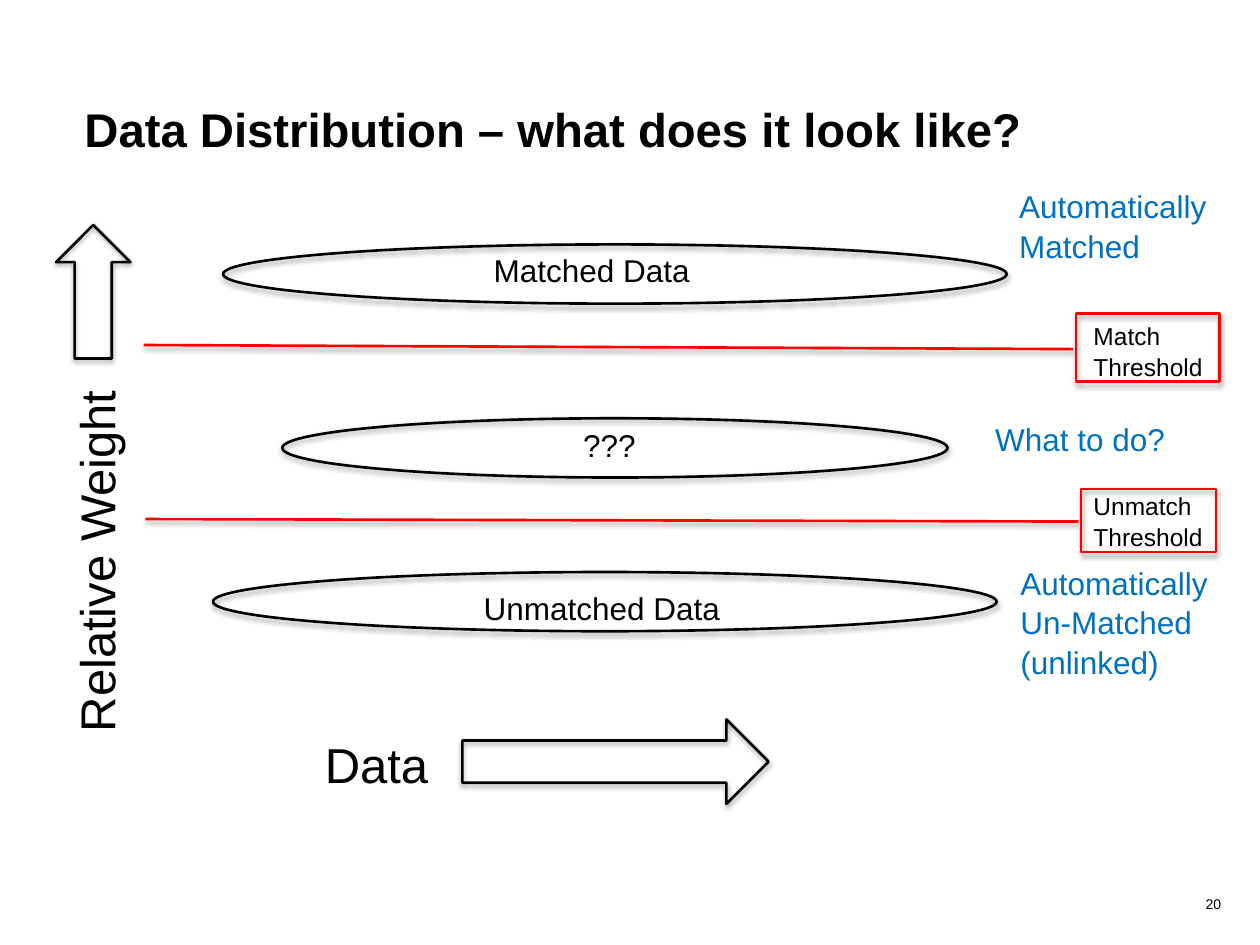
from lxml import etree
from pptx import Presentation
from pptx import util as u
from pptx.dml.color import RGBColor
from pptx.enum import shapes, text
from pptx.oxml.ns import qn

BLACK = RGBColor(0x00, 0x00, 0x00)
RED = RGBColor(0xFF, 0x00, 0x00)
BLUE = RGBColor(0x00, 0x70, 0xC0)
FONT = "Arial"
COLUMNS, ROWS = 100, 75
WIDTH, HEIGHT = u.Inches(10), u.Inches(7.5)
SHAPE = shapes.MSO_SHAPE


def on_grid(box):
    """Turn left, top, width, height in columns and rows into lengths."""
    left, top, width, height = box
    return (int(left * WIDTH / COLUMNS), int(top * HEIGHT / ROWS),
            int(width * WIDTH / COLUMNS), int(height * HEIGHT / ROWS))


def within(box, offset):
    """Move a part's box from its region's corner to the page."""
    return (box[0] + offset[0], box[1] + offset[1], offset[2], offset[3])


def add_text(page, box, lines, size, color=BLACK, bold=False, wrap=False,
             spacing=1.05):
    label = page.shapes.add_textbox(*on_grid(box))
    frame = label.text_frame
    frame.word_wrap = wrap
    for index, line in enumerate(lines):
        para = frame.paragraphs[0] if index == 0 else frame.add_paragraph()
        para.line_spacing = spacing
        span = para.add_run()
        span.text = line
        span.font.name = FONT
        span.font.size = u.Pt(size)
        span.font.bold = bold
        span.font.color.rgb = color
    return label


def add_soft_shadow(shape):
    shape.shadow.inherit = False
    effects = shape._element.spPr.find(qn("a:effectLst"))
    shadow = etree.SubElement(effects, qn("a:outerShdw"), blurRad=str(u.Pt(3.1)),
                              dist=str(u.Pt(1.6)), dir="5400000", rotWithShape="0")
    color = etree.SubElement(shadow, qn("a:srgbClr"), val=str(BLACK))
    etree.SubElement(color, qn("a:alpha"), val="38000")


def add_outline(page, kind, box, color=BLACK):
    shape = page.shapes.add_shape(kind, *on_grid(box))
    shape.fill.background()
    shape.line.color.rgb = color
    shape.line.width = u.Pt(1.5)
    add_soft_shadow(shape)
    return shape


def add_title(page, box, words):
    frame = add_text(page, box, [words], 27, bold=True, wrap=True,
                     spacing=1.0).text_frame
    frame.vertical_anchor = text.MSO_ANCHOR.BOTTOM
    frame.margin_left = frame.margin_right = u.Inches(0.02)
    frame.margin_top = frame.margin_bottom = u.Inches(0.02)


def add_band(page, box, label, label_offset, note, note_offset):
    """An ellipse of data, its label inside and the outcome at its right."""
    add_outline(page, SHAPE.OVAL, box)
    add_text(page, within(box, label_offset), [label], 18)
    add_text(page, within(box, note_offset), note, 18, BLUE)


def add_threshold(page, box, words, text_offset, leader):
    """A red box whose leader line runs across the data."""
    callout = add_outline(page, SHAPE.LINE_CALLOUT_1, box, RED)
    for index, value in enumerate(leader):
        callout.adjustments[index] = value
    add_text(page, within(box, text_offset), words, 14)


def add_axis(page, box, words, label_length, arrow_start, arrow_length, upright=False):
    """A label and an arrow along the box, read upwards when upright."""
    left, top, width, height = box
    thickness = width if upright else height

    def along(start, length, depth):
        if upright:
            center_x, center_y = left + width / 2, top + height - start - length / 2
        else:
            center_x, center_y = left + start + length / 2, top + height / 2
        return center_x - length / 2, center_y - depth / 2, length, depth

    label = add_text(page, along(0, label_length, 5.7), [words], 28, wrap=True)
    arrow = add_outline(page, SHAPE.RIGHT_ARROW,
                        along(arrow_start, arrow_length, thickness))
    for part in (label, arrow):
        part.rotation = 270 if upright else 0


def main():
    deck = Presentation()
    deck.slide_width, deck.slide_height = WIDTH, HEIGHT
    page = deck.slides.add_slide(deck.slide_layouts[6])

    # Title and page number
    add_title(page, (6.5, 5.3, 90.1, 7.4), "Data Distribution – what does it look like?")
    add_text(page, (94.7, 70.6, 5.3, 3.6), ["20"], 8, wrap=True, spacing=1.0)

    # Bands of data
    add_band(page, (17.7, 19.4, 62.2, 4.7), "Matched Data", (20.5, -0.1, 17.7, 4),
             ["Automatically", "Matched"], (62.2, -5.2, 17.7, 7.1))
    add_band(page, (22.4, 33.2, 52.8, 4.7), "???", (22.9, 0, 6.2, 4),
             ["What to do?"], (55.6, -0.5, 15.6, 4))
    add_band(page, (16.9, 45.4, 62.2, 4.7), "Unmatched Data", (20.5, 0.7, 21, 4),
             ["Automatically", "Un-Matched", "(unlinked)"], (63.1, -1.3, 17.7, 10.1))

    # Thresholds between the bands
    add_threshold(page, (85.4, 24.9, 11.4, 5.4), ["Match", "Threshold"],
                  (0.4, 0, 10.7, 5.7), (0.52, -0.02, 0.46, -6.49))
    add_threshold(page, (85.8, 38.8, 10.7, 5), ["Unmatch", "Threshold"],
                  (0, -0.4, 10.7, 5.7), (0.52, -0.02, 0.48, -6.94))

    # Axes
    add_axis(page, (4.45, 17.85, 5.9, 41.25), "Relative Weight", 37.7, 30.65, 10.6,
             upright=True)
    add_axis(page, (24.8, 57.1, 60.6, 6.7), "Data", 60.6, 11.9, 24.3)

    deck.save("out.pptx")


if __name__ == "__main__":
    main()
